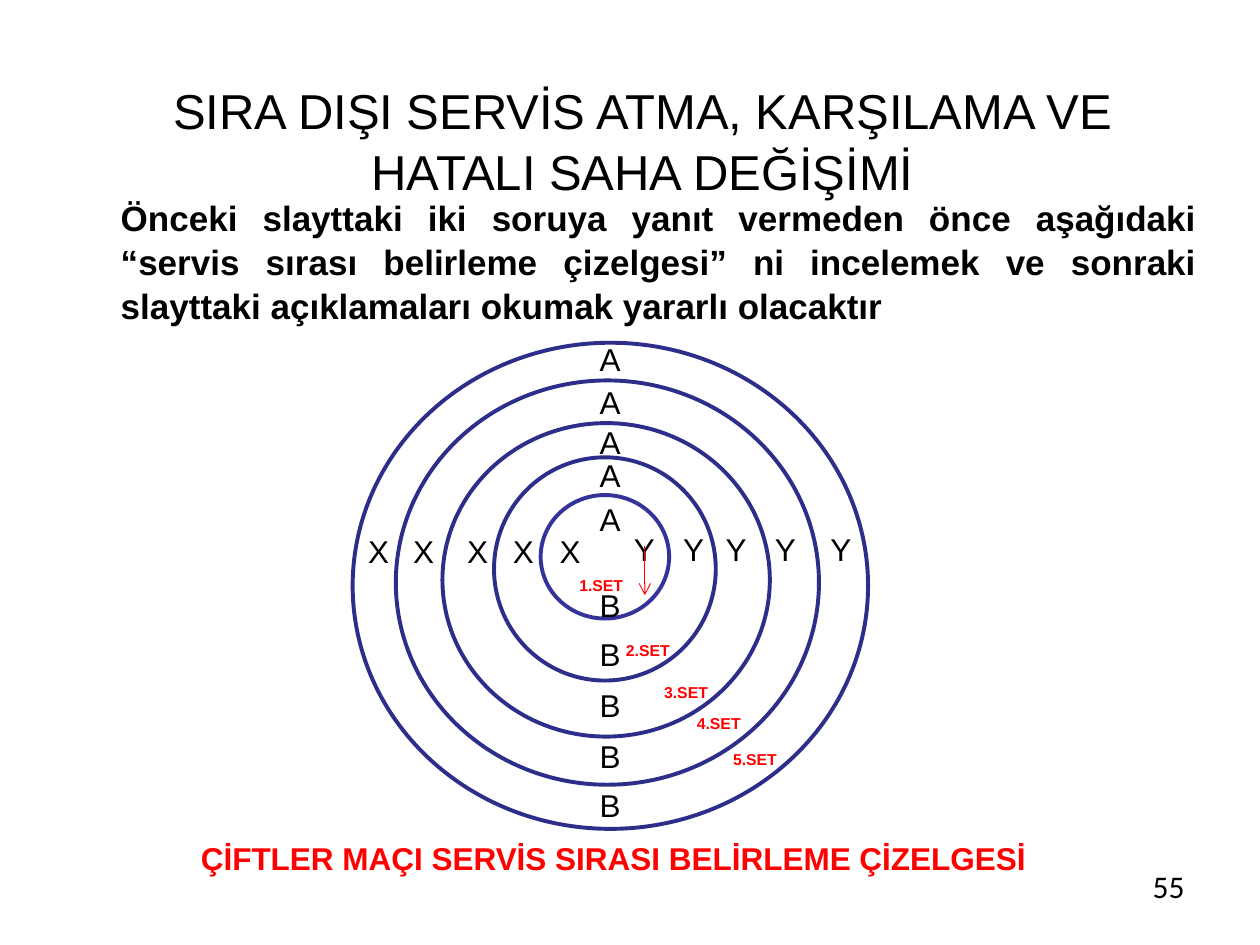
from lxml import etree
from pptx import Presentation, util as u
from pptx.dml.color import RGBColor
from pptx.enum import shapes, text
from pptx.oxml.ns import qn

BLACK = RGBColor(0x00, 0x00, 0x00)
RED = RGBColor(0xFF, 0x00, 0x00)
INDIGO = RGBColor(0x33, 0x33, 0x99)
NAVY = RGBColor(0x2D, 0x2D, 0x8A)
ALIGN = text.PP_ALIGN
ANCHOR = text.MSO_ANCHOR

deck = Presentation()
deck.slide_width, deck.slide_height = u.Cm(25.4), u.Cm(19.05)
page = deck.slides.add_slide(deck.slide_layouts[1])


def write(holder, words, frame, paragraph, font, color=BLACK):
    body = holder.text_frame
    body.text = words
    line = body.paragraphs[0]
    for target, values in (
        (body, {"word_wrap": True, "auto_size": text.MSO_AUTO_SIZE.NONE, **frame}),
        (line, {"space_before": u.Pt(0), **paragraph}),
    ):
        for key, value in values.items():
            setattr(target, key, value)
    for run in line.runs:
        for key, value in {"name": "Arial", **font}.items():
            setattr(run.font, key, value)
        run.font.color.rgb = color


def box(left, top, width, height):
    return page.shapes.add_textbox(u.Cm(left), u.Cm(top), u.Cm(width), u.Cm(height))


heading, intro = page.placeholders
for holder, place in ((heading, (1.5, 1.27, 22.91, 2.8)), (intro, (2.18, 3.96, 22.2, 2.59))):
    for side, length in zip(("left", "top", "width", "height"), place):
        setattr(holder, side, u.Cm(length))

write(heading, "SIRA DIŞI SERVİS ATMA, KARŞILAMA VE\vHATALI SAHA DEĞİŞİMİ",
      {"vertical_anchor": ANCHOR.TOP, "margin_top": u.Cm(0.3)},
      {"alignment": ALIGN.CENTER, "line_spacing": 1.04}, {"size": u.Pt(28)})
write(intro, "Önceki slayttaki iki soruya yanıt vermeden önce aşağıdaki “servis sırası "
      "belirleme çizelgesi” ni incelemek ve sonraki slayttaki açıklamaları okumak "
      "yararlı olacaktır",
      {"vertical_anchor": ANCHOR.MIDDLE},
      {"alignment": ALIGN.JUSTIFY, "line_spacing": 1.04}, {"size": u.Pt(20), "bold": True})
intro_format = intro.text_frame.paragraphs[0]._p.get_or_add_pPr()
intro_format.set("marL", "0")
intro_format.set("indent", "0")
etree.SubElement(intro_format, qn("a:buNone"))

write(box(0.94, 16.03, 22.86, 1.78), "ÇİFTLER MAÇI SERVİS SIRASI BELİRLEME ÇİZELGESİ",
      {"vertical_anchor": ANCHOR.BOTTOM}, {"alignment": ALIGN.CENTER},
      {"size": u.Pt(18), "bold": True}, RED)

TIGHT = {f"margin_{side}": 0 for side in ("left", "top", "right", "bottom")}
TIGHT["word_wrap"] = False

set_rings = [
    ((10.9, 9.98, 2.59, 2.49), INDIGO, (12.12, 11.79)),
    ((9.96, 9.22, 4.47, 4.5), NAVY, (13.06, 13.1)),
    ((8.92, 8.53, 6.6, 6.32), NAVY, (13.83, 13.95)),
    ((7.98, 7.67, 8.53, 8.15), NAVY, (14.49, 14.57)),
    ((7.11, 6.91, 10.39, 9.8), NAVY, (15.22, 15.3)),
]
for number, (place, color, (label_x, label_y)) in enumerate(set_rings, 1):
    ring = page.shapes.add_shape(shapes.MSO_SHAPE.OVAL, *map(u.Cm, place))
    ring.shadow.inherit = False
    ring.fill.background()
    ring.line.color.rgb = color
    ring.line.width = u.Pt(2.25)
    write(box(label_x - 0.5, label_y - 0.2, 1, 0.4), f"{number}.SET",
          {**TIGHT, "vertical_anchor": ANCHOR.MIDDLE}, {"alignment": ALIGN.CENTER},
          {"size": u.Pt(9), "bold": True}, RED)

players = {
    "A": [(12.09, top) for top in (6.86, 7.72, 8.53, 9.19, 10.08)],
    "B": [(12.09, top) for top in (11.81, 12.8, 13.82, 14.86, 15.85)],
    "X": [(left, 10.72) for left in (7.42, 8.33, 9.42, 10.34, 11.28)],
    "Y": [(left, 10.69) for left in (12.78, 13.77, 14.63, 15.62, 16.74)],
}
for player, spots in players.items():
    for left, top in spots:
        write(box(left, top, 0.43, 0.76), player, TIGHT, {}, {"size": u.Pt(18)})

turn_points = [(13.1, 11.38), (13.21, 11.46), (13.26, 11.56), (13.26, 11.66),
               (13.21, 11.79), (13.12, 11.92), (13.03, 12.01), (12.95, 12.04), (12.8, 12.04)]
turn_path = page.shapes.build_freeform(*turn_points[0], scale=u.Cm(1))
turn_path.add_line_segments(turn_points[1:], close=False)
turn = turn_path.convert_to_shape()
turn.shadow.inherit = False
turn.fill.background()
turn.line.color.rgb = RED
turn.line.width = u.Pt(0.5)
etree.SubElement(turn.line._get_or_add_ln(), qn("a:tailEnd"), type="arrow")

write(box(18.21, 17.35, 5.92, 1.32), "55", {}, {"alignment": ALIGN.RIGHT},
      {"size": u.Pt(18), "name": "Calibri"})

deck.save("out.pptx")
